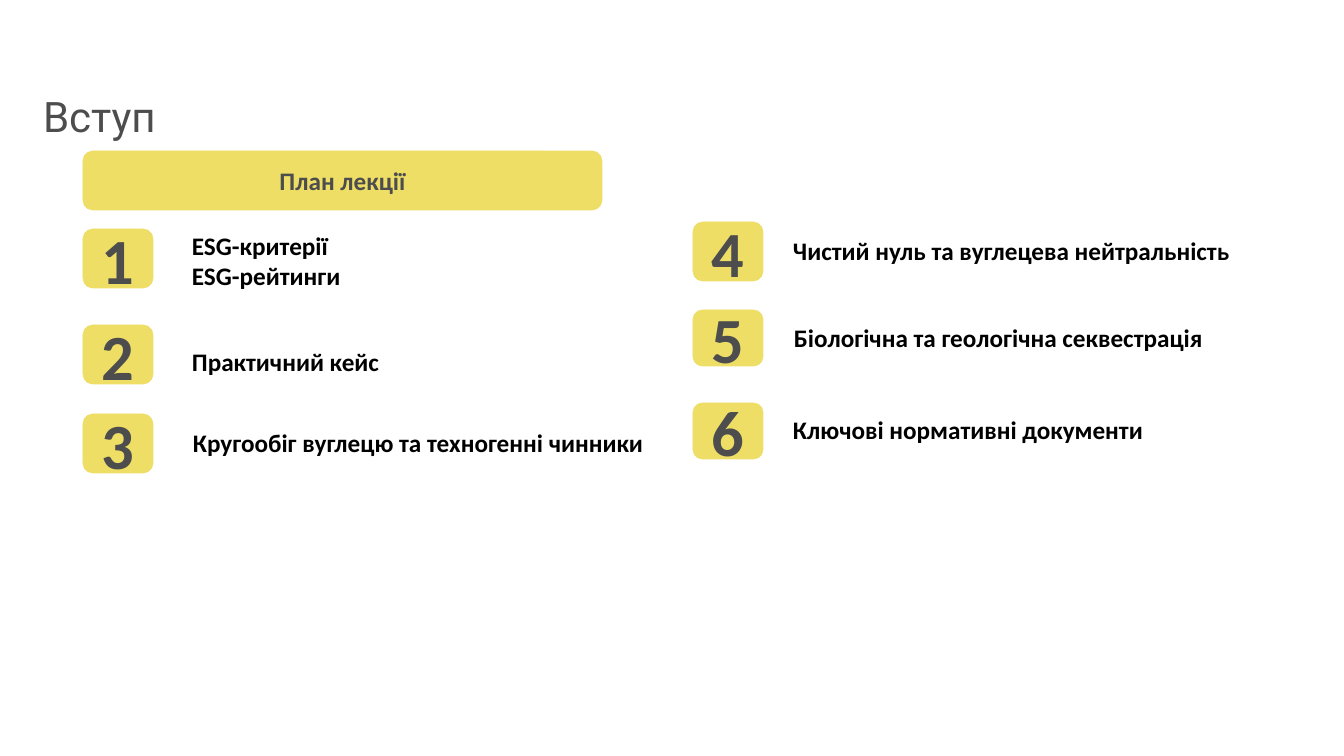
from pptx import Presentation
from pptx.dml.color import RGBColor
from pptx.enum.shapes import MSO_SHAPE
from pptx.enum.text import MSO_ANCHOR, MSO_AUTO_SIZE, PP_ALIGN
from pptx.util import Pt

PX = 18143
YELLOW = RGBColor(0xEE, 0xDE, 0x66)
GREY = RGBColor(0x4D, 0x4D, 0x4D)
BLACK = RGBColor(0x00, 0x00, 0x00)
LEFT, CENTER, JUSTIFY = PP_ALIGN.LEFT, PP_ALIGN.CENTER, PP_ALIGN.JUSTIFY


def px(*values):
    return [v * PX for v in values]


def write(tf, text, size=36, font="Calibri", color=BLACK, bold=True,
          align=LEFT, anchor=MSO_ANCHOR.TOP, spacing=None):
    tf.word_wrap = True
    tf.vertical_anchor = anchor
    p = tf.paragraphs[0]
    p.text = text
    p.alignment = align
    p.line_spacing = spacing
    for r in p.runs:
        r.font.size = Pt(size)
        r.font.name = font
        r.font.bold = bold
        r.font.color.rgb = color


class Deck:
    def __init__(self, width, height):
        self.prs = Presentation()
        self.prs.slide_width, self.prs.slide_height = px(width, height)
        self.s = self.prs.slides.add_slide(self.prs.slide_layouts[5])

    def title(self, text, x, y, w, h):
        sp = self.s.shapes.title
        sp.left, sp.top, sp.width, sp.height = px(x, y, w, h)
        sp.text_frame.auto_size = MSO_AUTO_SIZE.NONE
        write(sp.text_frame, text, size=60, font="Roboto", color=GREY,
              bold=False, anchor=MSO_ANCHOR.MIDDLE, spacing=0.9)

    def card(self, text, x, y, w, h, size=36):
        sp = self.s.shapes.add_shape(MSO_SHAPE.ROUNDED_RECTANGLE, *px(x, y, w, h))
        sp.shadow.inherit = False
        sp.fill.solid()
        sp.fill.fore_color.rgb = YELLOW
        sp.line.color.rgb = YELLOW
        sp.line.width = Pt(1)
        write(sp.text_frame, text, size=size, color=GREY, align=CENTER,
              anchor=MSO_ANCHOR.MIDDLE)

    def label(self, text, x, y, w, h, align):
        sp = self.s.shapes.add_textbox(*px(x, y, w, h))
        sp.text_frame.auto_size = MSO_AUTO_SIZE.SHAPE_TO_FIT_TEXT
        write(sp.text_frame, text, align=align)


def main():
    deck = Deck(1344, 756)
    deck.title("Вступ", 38, 96, 805, 45)
    deck.card("План лекції", 83, 151, 519, 59)

    topics = [
        ("ESG-критерії\nESG-рейтинги", 83, 229, 59, 187, 228, 454, 66, LEFT),
        ("Практичний кейс", 83, 325, 59, 187, 344, 454, 36, JUSTIFY),
        ("Кругообіг вуглецю та техногенні чинники", 83, 414, 59, 188, 425, 505, 36, LEFT),
        ("Чистий нуль та вуглецева нейтральність", 693, 222, 59, 788, 233, 507, 36, JUSTIFY),
        ("Біологічна та геологічна секвестрація", 693, 310, 56, 789, 320, 454, 36, JUSTIFY),
        ("Ключові нормативні документи", 693, 403, 56, 788, 412, 454, 36, JUSTIFY),
    ]
    for number, (text, card_x, card_y, card_h, x, y, w, h, align) in enumerate(topics, 1):
        deck.card(str(number), card_x, card_y, 70, card_h, size=92)
        deck.label(text, x, y, w, h, align)

    deck.prs.save("out.pptx")


if __name__ == "__main__":
    main()
